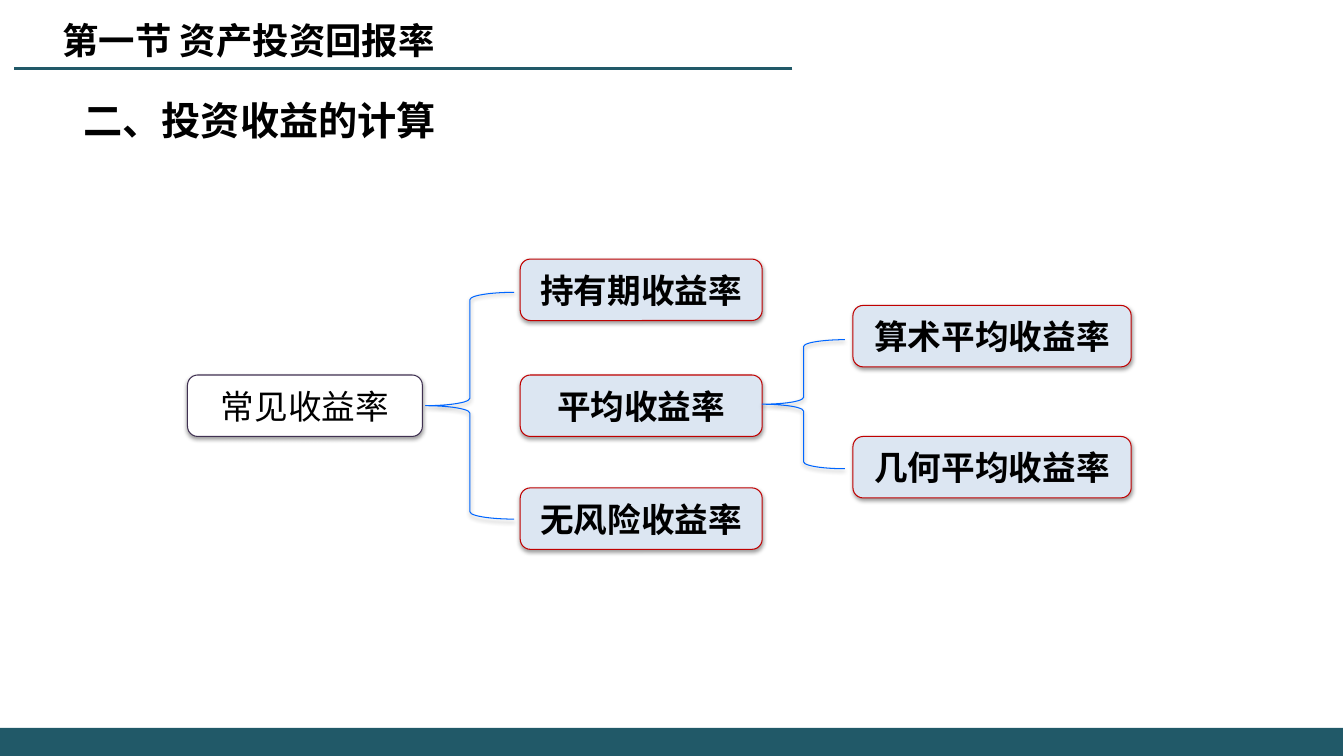
from dataclasses import dataclass

from lxml import etree
from pptx import Presentation
from pptx.dml.color import RGBColor
from pptx.enum.shapes import MSO_CONNECTOR, MSO_SHAPE
from pptx.enum.text import MSO_ANCHOR, MSO_AUTO_SIZE, PP_ALIGN
from pptx.oxml.ns import qn
from pptx.shapes.autoshape import Shape
from pptx.slide import Slide
from pptx.text.text import _Paragraph
from pptx.util import Inches, Pt

RECTANGLE = MSO_SHAPE.RECTANGLE
ROUNDED = MSO_SHAPE.ROUNDED_RECTANGLE
LEFT_BRACE = MSO_SHAPE.LEFT_BRACE
STRAIGHT = MSO_CONNECTOR.STRAIGHT
CENTER = PP_ALIGN.CENTER
MIDDLE = MSO_ANCHOR.MIDDLE
GROW = MSO_AUTO_SIZE.SHAPE_TO_FIT_TEXT

TEAL = RGBColor(0x21, 0x59, 0x68)
BLACK = RGBColor(0x00, 0x00, 0x00)
WHITE = RGBColor(0xFF, 0xFF, 0xFF)
PALE_BLUE = RGBColor(0xDC, 0xE6, 0xF2)
RED = RGBColor(0xC0, 0x00, 0x00)
PURPLE = RGBColor(0x40, 0x31, 0x52)
BLUE = RGBColor(0x00, 0x66, 0xFF)

SERIF = "Times New Roman"
SANS = "Calibri"
CJK = "Noto Sans CJK SC"
NODE_HEIGHT = 0.61


@dataclass(frozen=True)
class Heading:
    text: str
    left: float
    top: float
    width: float
    height: float
    size: int
    font: str


@dataclass(frozen=True)
class Node:
    text: str
    left: float
    top: float
    width: float
    fill: RGBColor = PALE_BLUE
    line: RGBColor = RED
    bold: bool = True
    font: str = SERIF


@dataclass(frozen=True)
class Brace:
    left: float
    top: float
    width: float
    height: float


HEADINGS = (
    Heading("第一节 资产投资回报率", 0.52, 0.13, 4.41, 0.54, 26, CJK),
    Heading("二、投资收益的计算", 0.73, 0.91, 5.1, 0.57, 28, SERIF),
)
NODES = (
    Node("常见收益率", 1.86, 3.72, 2.33, WHITE, PURPLE, False),
    Node("持有期收益率", 5.16, 2.57, 2.4),
    Node("平均收益率", 5.16, 3.72, 2.4),
    Node("无风险收益率", 5.16, 4.84, 2.4, font=SANS),
    Node("算术平均收益率", 8.46, 3.03, 2.76),
    Node("几何平均收益率", 8.46, 4.33, 2.76),
)
BRACES = (Brace(4.22, 2.9, 0.88, 2.25), Brace(7.56, 3.37, 0.82, 1.28))


def set_text(paragraph: _Paragraph, text: str, size: int, name: str, bold: bool) -> None:
    paragraph.text = text
    font = paragraph.font
    font.size = Pt(size)
    font.name = name
    font.bold = bold
    font.color.rgb = BLACK


def add_shadow(shape: Shape) -> None:
    shape.shadow.inherit = False
    effects = shape._element.spPr.find(qn("a:effectLst"))
    shadow = etree.SubElement(
        effects, qn("a:outerShdw"), blurRad=str(Pt(3.1)), dist=str(Pt(1.6)),
        dir="5400000", rotWithShape="0",
    )
    color = etree.SubElement(shadow, qn("a:srgbClr"), val=str(BLACK))
    etree.SubElement(color, qn("a:alpha"), val="38000")


def add_frame(slide: Slide) -> None:
    footer = slide.shapes.add_shape(
        RECTANGLE, Inches(0), Inches(7.22), Inches(13.32), Inches(0.28)
    )
    footer.shadow.inherit = False
    footer.fill.solid()
    footer.fill.fore_color.rgb = TEAL
    footer.line.fill.background()
    rule = slide.shapes.add_connector(
        STRAIGHT, Inches(7.86), Inches(0.68), Inches(0.14), Inches(0.68)
    )
    rule.line.color.rgb = TEAL
    rule.line.width = Pt(1.5)
    etree.SubElement(rule._element.spPr, qn("a:effectLst"))


def add_heading(slide: Slide, heading: Heading) -> None:
    box = slide.shapes.add_textbox(
        Inches(heading.left), Inches(heading.top),
        Inches(heading.width), Inches(heading.height),
    )
    frame = box.text_frame
    frame.word_wrap = True
    frame.auto_size = GROW
    set_text(frame.paragraphs[0], heading.text, heading.size, heading.font, True)


def add_node(slide: Slide, node: Node) -> None:
    shape = slide.shapes.add_shape(
        ROUNDED, Inches(node.left), Inches(node.top),
        Inches(node.width), Inches(NODE_HEIGHT),
    )
    shape.fill.solid()
    shape.fill.fore_color.rgb = node.fill
    shape.line.color.rgb = node.line
    shape.line.width = Pt(0.75)
    add_shadow(shape)
    frame = shape.text_frame
    frame.word_wrap = True
    frame.vertical_anchor = MIDDLE
    paragraph = frame.paragraphs[0]
    paragraph.alignment = CENTER
    set_text(paragraph, node.text, 24, node.font, node.bold)


def add_brace(slide: Slide, brace: Brace) -> None:
    shape = slide.shapes.add_shape(
        LEFT_BRACE, Inches(brace.left), Inches(brace.top),
        Inches(brace.width), Inches(brace.height),
    )
    shape.fill.background()
    shape.line.color.rgb = BLUE
    shape.line.width = Pt(0.75)
    add_shadow(shape)


def main() -> None:
    presentation = Presentation()
    presentation.slide_width = Inches(13.33)
    presentation.slide_height = Inches(7.5)
    slide = presentation.slides.add_slide(presentation.slide_layouts[6])
    add_frame(slide)
    for heading in HEADINGS:
        add_heading(slide, heading)
    for node in NODES:
        add_node(slide, node)
    for brace in BRACES:
        add_brace(slide, brace)
    presentation.save("out.pptx")


if __name__ == "__main__":
    main()
